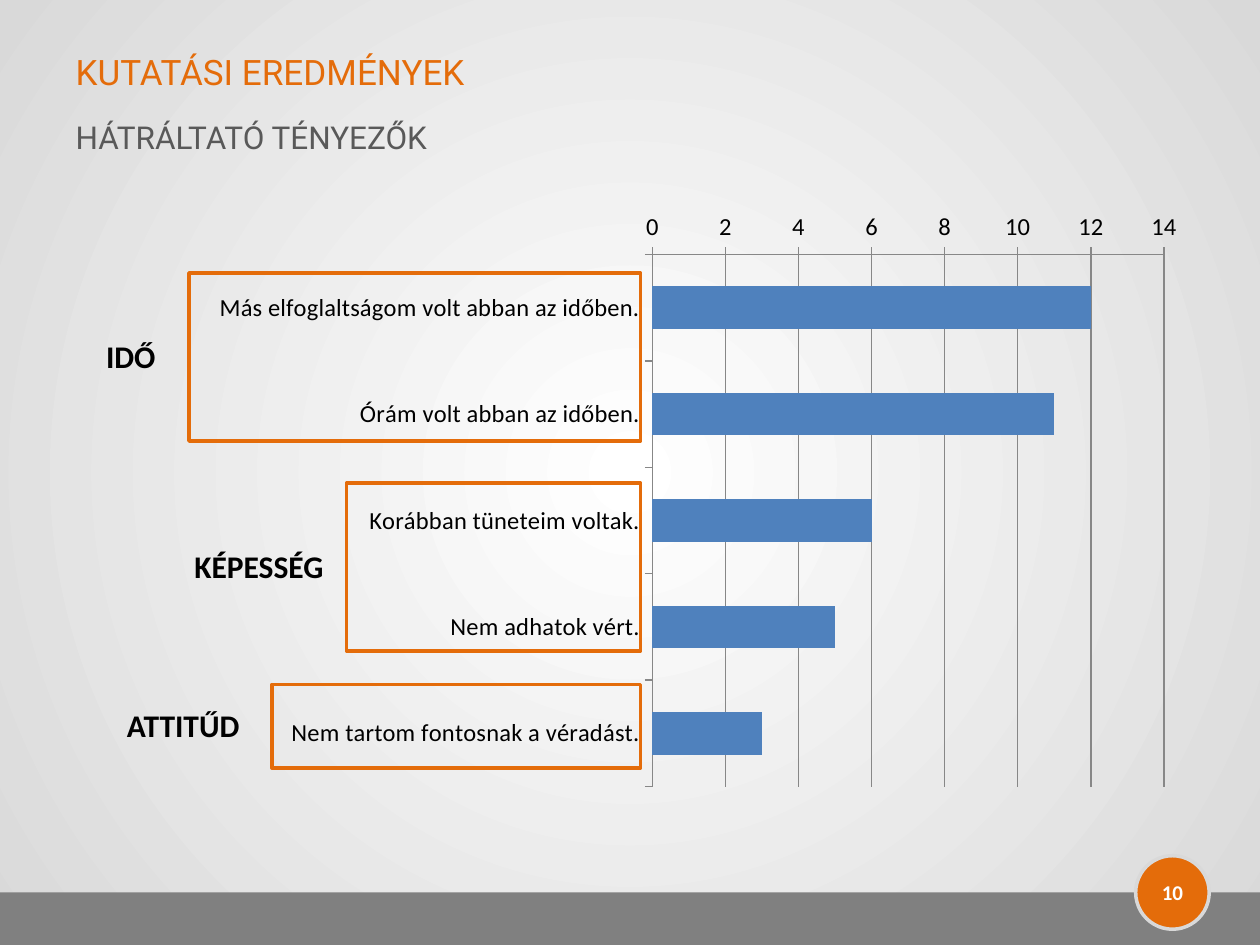
from lxml import etree
from pptx import Presentation
from pptx.chart.data import CategoryChartData
from pptx.dml.color import RGBColor
from pptx.enum.chart import XL_CHART_TYPE, XL_TICK_MARK
from pptx.enum.shapes import MSO_SHAPE
from pptx.enum.text import MSO_ANCHOR, MSO_AUTO_SIZE, PP_ALIGN
from pptx.oxml import parse_xml
from pptx.oxml.ns import nsdecls, qn
from pptx.util import Pt

RECTANGLE, OVAL = MSO_SHAPE.RECTANGLE, MSO_SHAPE.OVAL
LEFT, CENTER, RIGHT = PP_ALIGN.LEFT, PP_ALIGN.CENTER, PP_ALIGN.RIGHT
MIDDLE, TOP = MSO_ANCHOR.MIDDLE, MSO_ANCHOR.TOP
FIXED_SIZE = MSO_AUTO_SIZE.NONE
BAR_CLUSTERED = XL_CHART_TYPE.BAR_CLUSTERED
OUTSIDE, NO_TICK = XL_TICK_MARK.OUTSIDE, XL_TICK_MARK.NONE

ORANGE, GRAY, PALE, DARK = "E46C0A", "808080", "D9D9D9", "595959"
WHITE, BLACK, BLUE, GRID = "FFFFFF", "000000", "4F81BD", "878787"
HEADING_FONT, BODY_FONT = "Roboto", "Calibri"

BARRIERS = [
    ("Más elfoglaltságom volt abban az időben.", 12),
    ("Órám volt abban az időben.", 11),
    ("Korábban tüneteim voltak.", 6),
    ("Nem adhatok vért.", 5),
    ("Nem tartom fontosnak a véradást.", 3),
]
# Name, label right edge, frame left, frame top, frame height
GROUPS = [
    ("IDŐ", 96, 108, 156, 96),
    ("KÉPESSÉG", 192, 198, 276, 96),
    ("ATTITŰD", 144, 155.5, 391, 48),
]
FRAME_RIGHT = 366
LABEL_WIDTH, LABEL_HEIGHT = 144, 30


def color(hex_string):
    return RGBColor.from_string(hex_string)


class SlideBuilder:
    def __init__(self, slide):
        self.slide = slide

    def background(self, inner, outer):
        fill = self.slide.background.fill
        fill.gradient()
        for stop, shade, position in zip(fill.gradient_stops, (inner, outer), (0, 1)):
            stop.color.rgb = color(shade)
            stop.position = position
        # Turn the linear gradient into a circular one from the centre
        gradient = self.slide._element.find(".//" + qn("a:gradFill"))
        gradient.remove(gradient.find(qn("a:lin")))
        gradient.append(parse_xml(
            f'<a:path {nsdecls("a")} path="circle">'
            '<a:fillToRect l="50000" t="50000" r="50000" b="50000"/></a:path>'))

    def shape(self, kind, left, top, width, height, fill=None, line=None):
        shape = self.slide.shapes.add_shape(
            kind, Pt(left), Pt(top), Pt(width), Pt(height))
        shape.shadow.inherit = False
        if fill:
            shape.fill.solid()
            shape.fill.fore_color.rgb = color(fill)
        else:
            shape.fill.background()
        if line:
            shape.line.color.rgb = color(line)
            shape.line.width = Pt(2)
        else:
            shape.line.fill.background()

    def style_text(self, shape, text, size, shade, font, bold, align, anchor):
        frame = shape.text_frame
        frame.text = text
        frame.word_wrap = True
        frame.auto_size = FIXED_SIZE
        frame.vertical_anchor = anchor
        paragraph = frame.paragraphs[0]
        paragraph.alignment = align
        run_font = paragraph.runs[0].font
        run_font.name, run_font.size, run_font.bold = font, Pt(size), bold
        run_font.color.rgb = color(shade)
        return paragraph

    def heading(self, index, text, top, height, size, shade):
        shape = self.slide.placeholders[index]
        shape.left, shape.top = Pt(36), Pt(top)
        shape.width, shape.height = Pt(648), Pt(height)
        paragraph = self.style_text(
            shape, text, size, shade, HEADING_FONT, False, LEFT, MIDDLE)
        # No bullet and no hanging indent
        properties = paragraph._p.get_or_add_pPr()
        properties.set("marL", "0")
        properties.set("indent", "0")
        etree.SubElement(properties, qn("a:buNone"))

    def label(self, text, left, top, width, height, size, shade, align, anchor):
        box = self.slide.shapes.add_textbox(Pt(left), Pt(top), Pt(width), Pt(height))
        self.style_text(box, text, size, shade, BODY_FONT, True, align, anchor)

    def bar_chart(self, rows, left, top, width, height):
        data = CategoryChartData()
        data.categories = [name for name, _ in rows]
        data.add_series("Series 1", [value for _, value in rows])
        chart = self.slide.shapes.add_chart(
            BAR_CLUSTERED, Pt(left), Pt(top), Pt(width), Pt(height), data).chart
        chart.has_legend = chart.has_title = False
        chart.font.name, chart.font.size = BODY_FONT, Pt(14)
        chart.font.color.rgb = color(BLACK)

        plot = chart.plots[0]
        plot.gap_width = 150
        plot.vary_by_categories = False
        bars = plot.series[0].format.fill
        bars.solid()
        bars.fore_color.rgb = color(BLUE)

        categories, values = chart.category_axis, chart.value_axis
        categories.reverse_order = True
        values.minimum_scale, values.maximum_scale, values.major_unit = 0, 14, 2
        values.has_major_gridlines = True
        values.major_gridlines.format.line.color.rgb = color(GRID)
        for axis in (categories, values):
            axis.major_tick_mark, axis.minor_tick_mark = OUTSIDE, NO_TICK
            axis.format.line.color.rgb = color(GRID)

        # Fix the inner plot area as shares of the chart
        area = chart._chartSpace.find(".//" + qn("c:plotArea"))
        for old in area.findall(qn("c:layout")):
            area.remove(old)
        shares = {"x": 0.454, "y": 0.092, "w": 0.513, "h": 0.889}
        area.insert(0, parse_xml(
            f'<c:layout {nsdecls("c")}><c:manualLayout><c:layoutTarget val="inner"/>'
            '<c:xMode val="edge"/><c:yMode val="edge"/>'
            + "".join(f'<c:{key} val="{share}"/>' for key, share in shares.items())
            + "</c:manualLayout></c:layout>"))


def main():
    presentation = Presentation()
    presentation.slide_width, presentation.slide_height = Pt(720), Pt(540)
    slide = presentation.slides.add_slide(presentation.slide_layouts[1])
    builder = SlideBuilder(slide)

    # Background, footer band and page badge
    builder.background(WHITE, PALE)
    builder.shape(RECTANGLE, 0, 510, 720, 30, fill=GRAY)
    builder.shape(OVAL, 649, 489, 42, 42, fill=ORANGE, line=PALE)
    builder.label("10", 649, 495.5, 42, 29, 12, WHITE, CENTER, MIDDLE)

    # Headings
    builder.heading(0, "KUTATÁSI EREDMÉNYEK", 21.6, 38.4, 20, ORANGE)
    builder.heading(1, "HÁTRÁLTATÓ TÉNYEZŐK", 60, 36, 18, DARK)

    # Chart, with framed groups of categories
    builder.bar_chart(BARRIERS, 114, 114, 570, 342)
    for name, label_right, left, top, height in GROUPS:
        builder.shape(RECTANGLE, left, top, FRAME_RIGHT - left, height, line=ORANGE)
        builder.label(name, label_right - LABEL_WIDTH, top + (height - LABEL_HEIGHT) / 2,
                      LABEL_WIDTH, LABEL_HEIGHT, 18, BLACK, RIGHT, TOP)

    presentation.save("out.pptx")


if __name__ == "__main__":
    main()
